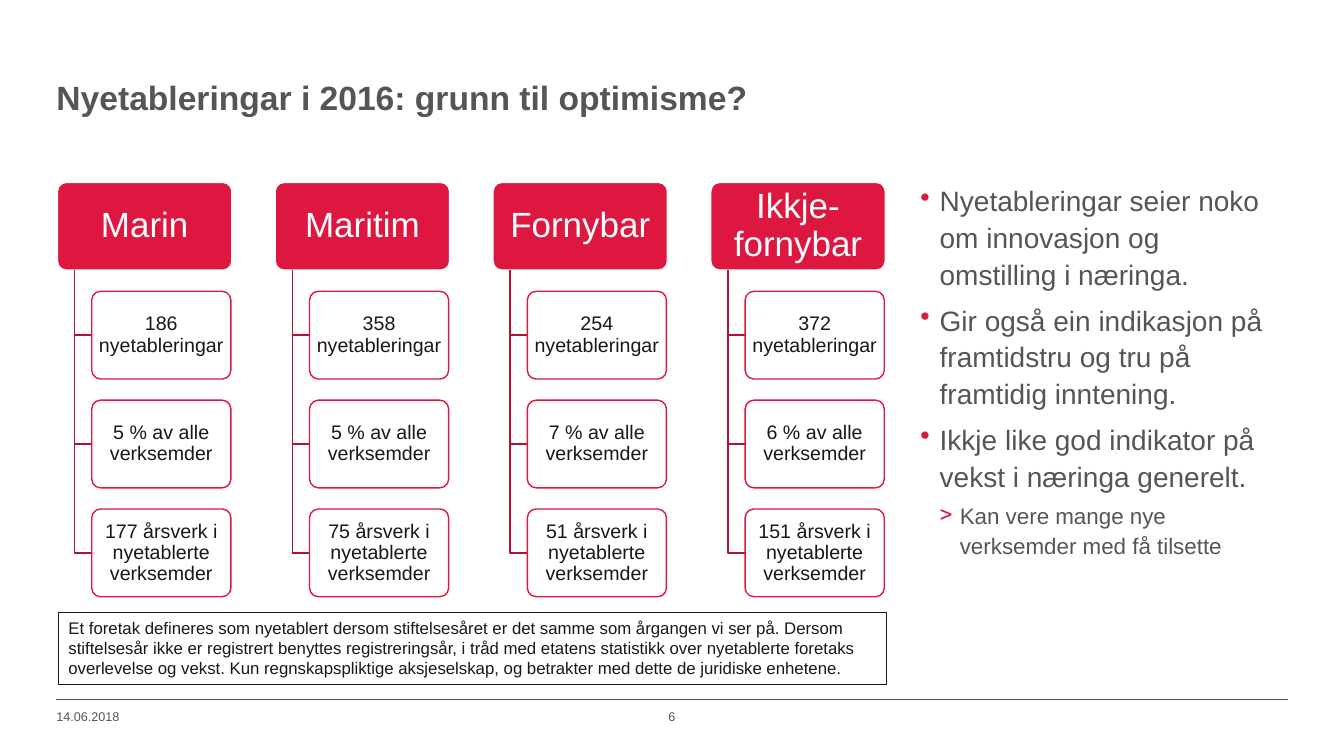
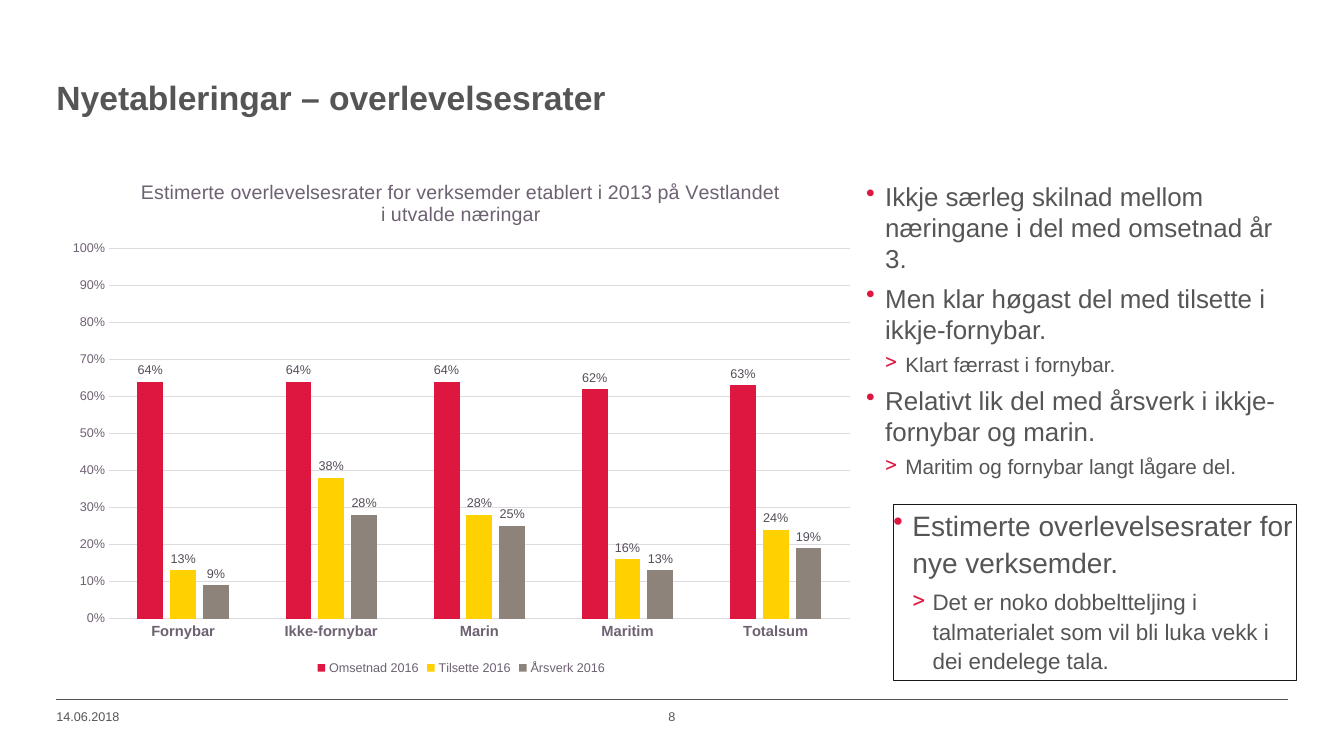
from lxml import etree
from pptx import Presentation
from pptx import util as u
from pptx.chart.data import CategoryChartData
from pptx.dml.color import RGBColor
from pptx.enum import chart as charts, shapes, text
from pptx.oxml.ns import qn

RED, DARK_RED, WHITE = "DD1740", "B11233", "FFFFFF"
GREY, INK = "555555", "1A171B"
CHART_TEXT, LABEL_TEXT, GRID = "6E6172", "564C59", "DEDADF"
YELLOW, TAUPE = "FFD100", "8E837A"


def color(value):
    return RGBColor.from_string(value)


def set_font(font, size, shade, bold=False):
    formats = {"name": "Arial", "size": u.Pt(size), "bold": bold}
    for name, value in formats.items():
        setattr(font, name, value)
    font.color.rgb = color(shade)


def set_line(line, shade, width):
    line.color.rgb = color(shade)
    line.width = u.Pt(width)


def place_in_chart(parent, **values):
    """Give a chart part a manual layout in fractions of the chart."""
    layout = parent.find(qn("c:layout"))
    if layout is None:
        layout = etree.Element(qn("c:layout"))
        parent.insert(0, layout)
    manual = etree.SubElement(layout, qn("c:manualLayout"))
    for name, value in values.items():
        etree.SubElement(manual, qn("c:" + name)).set("val", str(value))


class Builder:
    BULLETS = (("•", 0.19, 0.19, 6), (">", 0.39, 0.2, 5))

    def __init__(self):
        self.deck = Presentation()
        self.deck.slide_width = u.Inches(13.33)
        self.deck.slide_height = u.Inches(7.5)
        self.page = None

    def start_page(self, title, number):
        self.page = self.deck.slides.add_slide(self.deck.slide_layouts[6])
        rule = self.page.shapes.add_connector(
            shapes.MSO_CONNECTOR.STRAIGHT,
            *map(u.Inches, (0.56, 6.94, 12.77, 6.94)))
        set_line(rule.line, GREY, 0.25)
        etree.SubElement(rule._element.spPr, qn("a:effectLst"))
        self.label((0.56, 7.03, 1.35, 0.22), "14.06.2018", 9)
        self.label((6.35, 7.03, 0.63, 0.22), str(number), 9,
                   align=text.PP_ALIGN.CENTER)
        self.label((0.56, 0.76, 12.2, 0.83), title, 24, bold=True)

    def frame(self, box, margins=(0, 0), anchor=text.MSO_ANCHOR.TOP):
        frame = box.text_frame
        across, down = map(u.Inches, margins)
        formats = {"word_wrap": True, "vertical_anchor": anchor,
                   "margin_left": across, "margin_right": across,
                   "margin_top": down, "margin_bottom": down}
        for name, value in formats.items():
            setattr(frame, name, value)
        return frame

    def text_box(self, at):
        return self.page.shapes.add_textbox(*map(u.Inches, at))

    def label(self, at, words, size, bold=False, align=text.PP_ALIGN.LEFT):
        para = self.frame(self.text_box(at)).paragraphs[0]
        para.text = words
        para.alignment = align
        set_font(para.font, size, GREY, bold)

    def panel(self, at, fill, line, width, rounded=False):
        kind = shapes.MSO_SHAPE
        box = self.page.shapes.add_shape(
            kind.ROUNDED_RECTANGLE if rounded else kind.RECTANGLE,
            *map(u.Inches, at))
        box.shadow.inherit = False
        if rounded:
            box.adjustments[0] = 0.1
        if fill:
            box.fill.solid()
            box.fill.fore_color.rgb = color(fill)
        else:
            box.fill.background()
        set_line(box.line, line, width)
        return box

    def card(self, at, words, size, shade, fill, line, margins):
        box = self.panel(at, fill, line, 1, rounded=True)
        para = self.frame(box, margins, text.MSO_ANCHOR.MIDDLE).paragraphs[0]
        para.text = words
        para.alignment = text.PP_ALIGN.CENTER
        para.line_spacing = 0.9
        set_font(para.font, size, shade)

    def note(self, at, words):
        box = self.panel(at, None, INK, 0.75)
        para = self.frame(box, (0.1, 0.05)).paragraphs[0]
        para.text = words
        para.alignment = text.PP_ALIGN.LEFT
        set_font(para.font, 12, INK)

    def elbow(self, left, top, right, bottom):
        """Draw an open line that runs down and then right."""
        start, *corners = [tuple(map(u.Inches, point)) for point in (
            (left, top), (left, bottom), (right, bottom))]
        builder = self.page.shapes.build_freeform(*start)
        builder.add_line_segments(corners, close=False)
        branch = builder.convert_to_shape()
        branch.shadow.inherit = False
        branch.fill.background()
        set_line(branch.line, DARK_RED, 1)

    def bullets(self, box, items, sizes=(20, 16), spacing=1.1):
        """Fill a box with (level, words) items."""
        frame = self.frame(box)
        for index, (level, words) in enumerate(items):
            para = frame.add_paragraph() if index else frame.paragraphs[0]
            para.text = words
            mark, left, hanging, before = self.BULLETS[level]
            props = para._p.get_or_add_pPr()
            props.set("marL", str(u.Inches(left)))
            props.set("indent", str(-u.Inches(hanging)))
            shade = etree.SubElement(props, qn("a:buClr"))
            etree.SubElement(shade, qn("a:srgbClr")).set("val", RED)
            etree.SubElement(props, qn("a:buChar")).set("char", mark)
            para.level = level
            para.alignment = text.PP_ALIGN.LEFT
            para.line_spacing = spacing
            para.space_before = u.Pt(before if index else 0)
            set_font(para.font, sizes[level], GREY)

    def column_chart(self, at, title, categories, series):
        data = CategoryChartData(number_format="0%")
        data.categories = categories
        for name, values, _ in series:
            data.add_series(name, values)
        chart = self.page.shapes.add_chart(
            charts.XL_CHART_TYPE.COLUMN_CLUSTERED,
            *map(u.Inches, at), data).chart
        set_font(chart.font, 10, INK)

        chart.has_title = True
        para = chart.chart_title.text_frame.paragraphs[0]
        para.text = title
        set_font(para.font, 14, CHART_TEXT)
        place_in_chart(chart.chart_title.element, xMode="edge", yMode="edge",
                       x=0.1, y=0.03)
        place_in_chart(chart.element.find(".//" + qn("c:plotArea")),
                       layoutTarget="inner", xMode="edge", yMode="edge",
                       x=0.065, y=0.17, w=0.915, h=0.713)

        chart.has_legend = True
        chart.legend.position = charts.XL_LEGEND_POSITION.BOTTOM
        chart.legend.include_in_layout = False
        set_font(chart.legend.font, 9, CHART_TEXT)

        across, up = chart.category_axis, chart.value_axis
        for axis in (across, up):
            axis.major_tick_mark = charts.XL_TICK_MARK.NONE
            axis.minor_tick_mark = charts.XL_TICK_MARK.NONE
        set_font(across.tick_labels.font, 10.5, CHART_TEXT, bold=True)
        set_line(across.format.line, GRID, 0.75)
        set_font(up.tick_labels.font, 9, CHART_TEXT)
        up.format.line.fill.background()
        set_line(up.major_gridlines.format.line, GRID, 0.75)
        up.minimum_scale, up.maximum_scale, up.major_unit = 0, 1, 0.1
        up.tick_labels.number_format = "0%"
        up.tick_labels.number_format_is_linked = False

        plot = chart.plots[0]
        plot.vary_by_categories = False
        plot.gap_width, plot.overlap = 219, -27
        for columns, (_, _, fill) in zip(plot.series, series):
            columns.format.fill.solid()
            columns.format.fill.fore_color.rgb = color(fill)
            labels = columns.data_labels
            formats = {"show_value": True, "number_format": "0%",
                       "number_format_is_linked": False,
                       "position": charts.XL_LABEL_POSITION.OUTSIDE_END}
            for name, value in formats.items():
                setattr(labels, name, value)
            set_font(labels.font, 9, LABEL_TEXT)


def industry_page(show):
    show.start_page("Nyetableringar i 2016: grunn til optimisme?", 6)
    show.note(
        (0.58, 6.08, 8.21, 0.71),
        "Et foretak defineres som nyetablert dersom stiftelsesåret er det "
        "samme som årgangen vi ser på. Dersom stiftelsesår ikke er registrert "
        "benyttes registreringsår, i tråd med etatens statistikk over "
        "nyetablerte foretaks overlevelse og vekst. Kun regnskapspliktige "
        "aksjeselskap, og betrakter med dette de juridiske enhetene.")
    industries = (("Marin", 186, 5, 177), ("Maritim", 358, 5, 75),
                  ("Fornybar", 254, 7, 51), ("Ikkje-fornybar", 372, 6, 151))
    top, row_step, height = 1.81, 1.08, 0.87
    for column, (industry, started, share, years) in enumerate(industries):
        left = 0.57 + 2.16 * column
        show.card((left, top, 1.73, height), industry, 25, WHITE, RED, WHITE,
                  (0.05, 0.03))
        facts = (f"{started} nyetableringar", f"{share} % av alle verksemder",
                 f"{years} årsverk i nyetablerte verksemder")
        for row, fact in enumerate(facts, 1):
            card_top = top + row_step * row
            show.elbow(left + 0.17, top + height, left + 0.34,
                       card_top + height / 2)
            show.card((left + 0.34, card_top, 1.38, height), fact, 14, INK,
                      WHITE, RED, (0.03, 0.02))
    show.bullets(show.text_box((9.13, 1.79, 3.46, 4.78)), (
        (0, "Nyetableringar seier noko om innovasjon og omstilling i næringa."),
        (0, "Gir også ein indikasjon på framtidstru og tru på framtidig "
            "inntening."),
        (0, "Ikkje like god indikator på vekst i næringa generelt."),
        (1, "Kan vere mange nye verksemder med få tilsette")))


def survival_page(show):
    show.start_page("Nyetableringar – overlevelsesrater", 8)
    show.column_chart(
        (0.56, 1.59, 8.03, 5.15),
        "Estimerte overlevelsesrater for verksemder etablert i 2013 på "
        "Vestlandet i utvalde næringar",
        ("Fornybar", "Ikke-fornybar", "Marin", "Maritim", "Totalsum"),
        (("Omsetnad 2016", (0.64, 0.64, 0.64, 0.62, 0.63), RED),
         ("Tilsette 2016", (0.13, 0.38, 0.28, 0.16, 0.24), YELLOW),
         ("Årsverk 2016", (0.09, 0.28, 0.25, 0.13, 0.19), TAUPE)))
    show.bullets(show.text_box((8.59, 1.79, 4.24, 3.07)), (
        (0, "Ikkje særleg skilnad mellom næringane i del med omsetnad år 3."),
        (0, "Men klar høgast del med tilsette i ikkje-fornybar."),
        (1, "Klart færrast i fornybar."),
        (0, "Relativt lik del med årsverk i ikkje-fornybar og marin."),
        (1, "Maritim og fornybar langt lågare del.")),
        sizes=(18.5, 14.8), spacing=1.0)
    show.bullets(show.panel((8.86, 5.01, 4, 1.74), None, INK, 0.75), (
        (0, "Estimerte overlevelsesrater for nye verksemder."),
        (1, "Det er noko dobbeltteljing i talmaterialet som vil bli luka vekk "
            "i dei endelege tala.")))


def main():
    show = Builder()
    industry_page(show)
    survival_page(show)
    show.deck.save("out.pptx")


if __name__ == "__main__":
    main()
